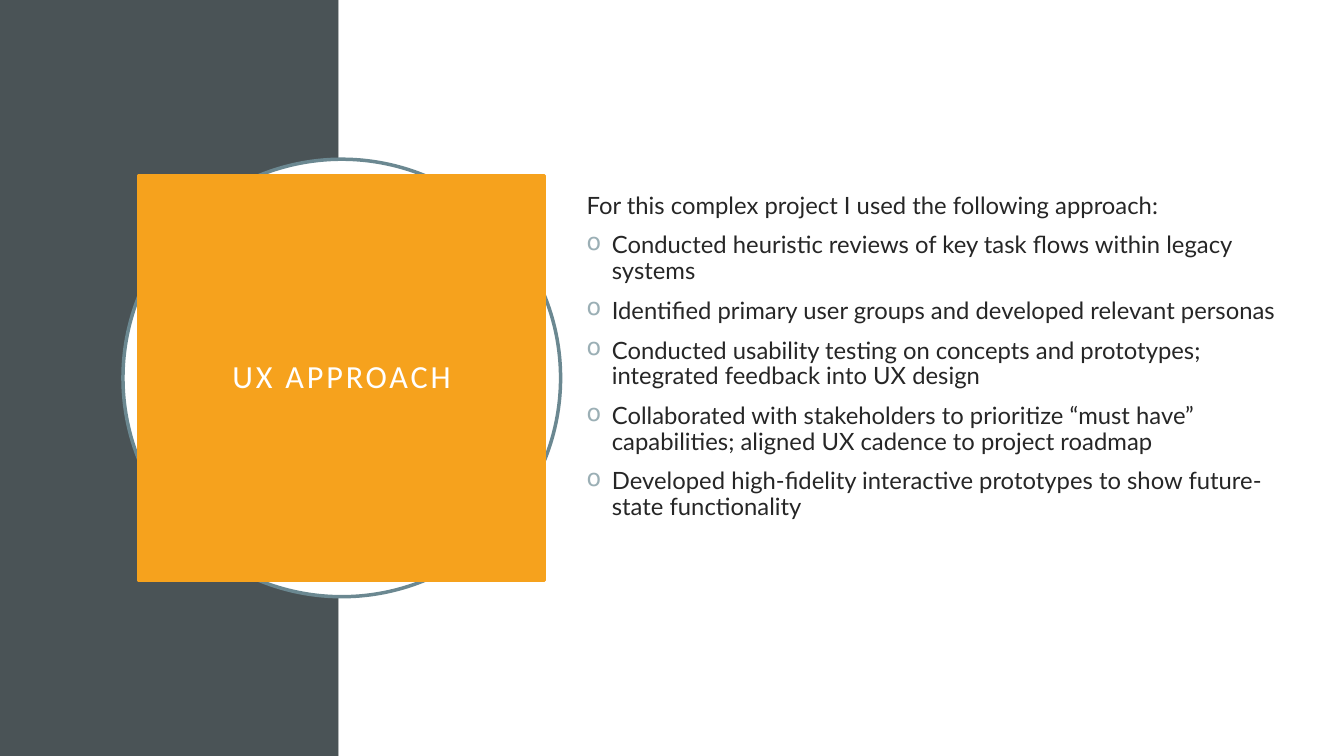
from pptx import Presentation
from pptx.dml.color import RGBColor
from pptx.enum.shapes import MSO_SHAPE
from pptx.enum.text import MSO_ANCHOR, MSO_AUTO_SIZE, PP_ALIGN
from pptx.oxml.ns import qn
from pptx.util import Inches, Pt
from lxml.etree import SubElement

SLATE = RGBColor(0x4A, 0x53, 0x56)
WHITE = RGBColor(0xFF, 0xFF, 0xFF)
TEAL = RGBColor(0x6B, 0x88, 0x91)
ORANGE = RGBColor(0xF6, 0xA2, 0x1D)
INK = RGBColor(0x26, 0x26, 0x26)
BULLET = RGBColor(0x9B, 0xAF, 0xB5)

WIDTH, HEIGHT = Inches(13.33), Inches(7.5)
BAND_WIDTH = Inches(3.36)
RING_BOX = Inches(1.22), Inches(1.58), Inches(4.34), Inches(4.34)
BODY_BOX = Inches(5.72), Inches(1.23), Inches(7.16), Inches(5.03)

INTRO = "For this complex project I used the following approach:"
STEPS = [
    "Conducted heuristic reviews of key task flows within legacy systems",
    "Identified primary user groups and developed relevant personas",
    "Conducted usability testing on concepts and prototypes; integrated feedback into UX design",
    "Collaborated with stakeholders to prioritize “must have” capabilities; "
    "aligned UX cadence to project roadmap",
    "Developed high-fidelity interactive prototypes to show future-state functionality",
]


def add_filled_shape(slide, kind, box, fill, line=None):
    shape = slide.shapes.add_shape(kind, *box)
    shape.shadow.inherit = False
    shape.fill.solid()
    shape.fill.fore_color.rgb = fill
    if line is None:
        shape.line.fill.background()
    else:
        shape.line.color.rgb = line
        shape.line.width = Pt(2.5)
    return shape


def format_run(run, font_name, size, color):
    run.font.name = font_name
    run.font.size = Pt(size)
    run.font.color.rgb = color


def add_backdrop(slide, box):
    left, top, width, height = box
    split = left + BAND_WIDTH
    add_filled_shape(slide, MSO_SHAPE.RECTANGLE, (left, top, BAND_WIDTH, height), SLATE)
    add_filled_shape(
        slide, MSO_SHAPE.RECTANGLE, (split, top, width - BAND_WIDTH, height), WHITE
    )


def add_title_panel(slide, box):
    left, top, width, height = box
    add_filled_shape(slide, MSO_SHAPE.OVAL, box, WHITE, TEAL)
    inset = Inches(0.16)
    title = slide.shapes.title
    title.left, title.top = left + inset, top + inset
    title.width, title.height = width - 2 * inset, height - 2 * inset
    title.fill.solid()
    title.fill.fore_color.rgb = ORANGE
    title.line.color.rgb = ORANGE
    title.line.width = Pt(2.5)
    frame = title.text_frame
    frame.text = "UX APPROACH"
    frame.word_wrap = True
    frame.auto_size = MSO_AUTO_SIZE.NONE
    frame.vertical_anchor = MSO_ANCHOR.MIDDLE
    frame.margin_left = frame.margin_right = Inches(0.2)
    frame.margin_top = frame.margin_bottom = Inches(0.2)
    paragraph = frame.paragraphs[0]
    paragraph.alignment = PP_ALIGN.CENTER
    paragraph.line_spacing = 0.9
    run = paragraph.runs[0]
    format_run(run, "Calibri", 23, WHITE)
    run.font._element.set("spc", "200")
    slide.shapes._spTree.append(title._element)


def add_bullet(paragraph):
    properties = paragraph._p.get_or_add_pPr()
    properties.set("marL", str(Inches(0.25)))
    properties.set("indent", str(-Inches(0.25)))
    bullet_color = SubElement(properties, qn("a:buClr"))
    SubElement(bullet_color, qn("a:srgbClr")).set("val", str(BULLET))
    SubElement(properties, qn("a:buChar")).set("char", "o")


def add_approach_list(slide, box):
    frame = slide.shapes.add_textbox(*box).text_frame
    frame.word_wrap = True
    frame.vertical_anchor = MSO_ANCHOR.MIDDLE
    frame.margin_bottom = Inches(0.45)
    frame.text = "\n".join([INTRO, *STEPS])
    for index, paragraph in enumerate(frame.paragraphs):
        paragraph.line_spacing = 0.9
        paragraph.space_before = Pt(10)
        format_run(paragraph.runs[0], "Lato", 17, INK)
        if index:
            add_bullet(paragraph)


def main():
    presentation = Presentation()
    presentation.slide_width, presentation.slide_height = WIDTH, HEIGHT
    slide = presentation.slides.add_slide(presentation.slide_layouts[5])
    add_backdrop(slide, (0, 0, WIDTH, HEIGHT))
    add_title_panel(slide, RING_BOX)
    add_approach_list(slide, BODY_BOX)
    presentation.save("out.pptx")


if __name__ == "__main__":
    main()
